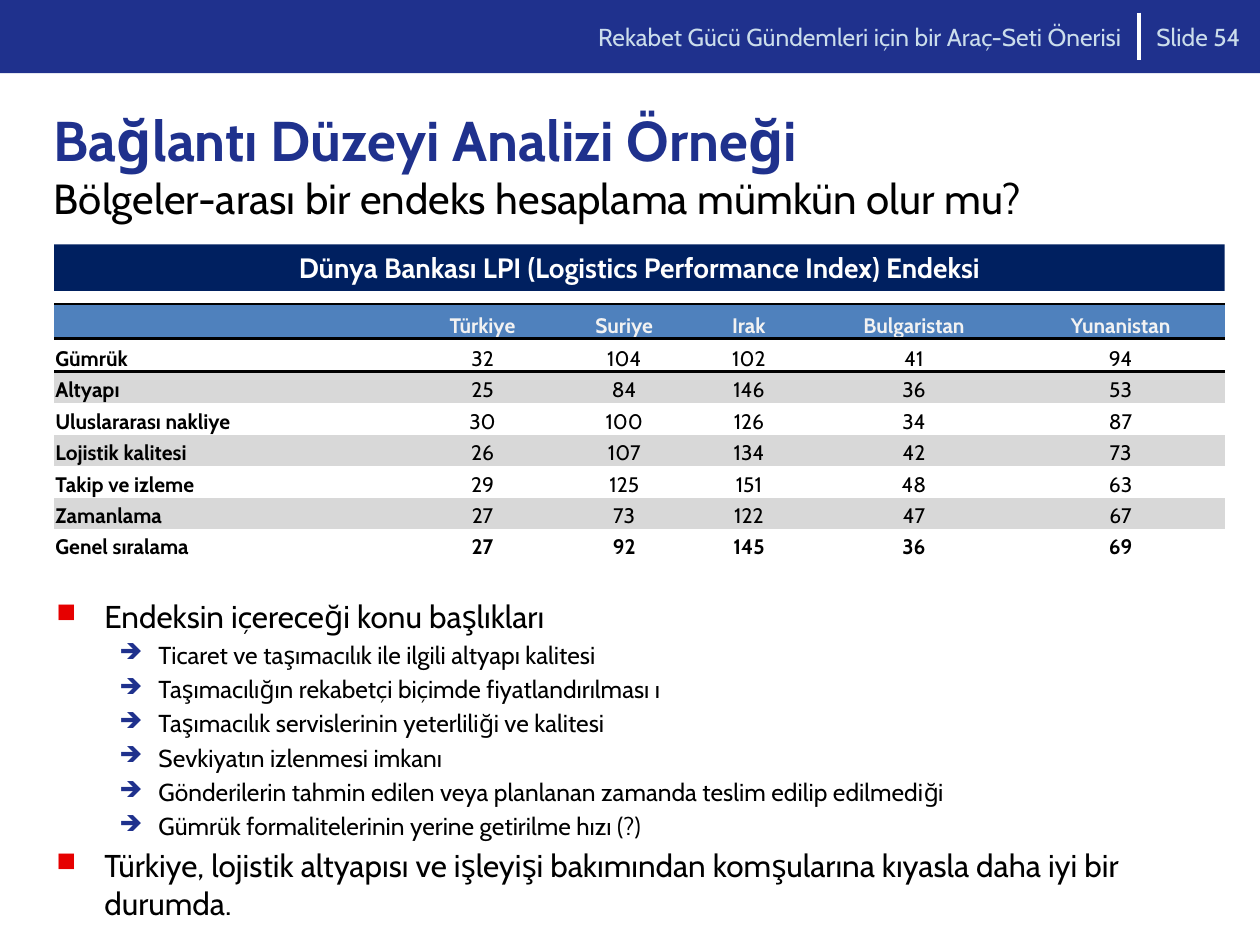
from dataclasses import dataclass
from typing import NamedTuple

from lxml import etree
from pptx import Presentation
from pptx.dml.color import RGBColor
from pptx.enum.shapes import MSO_CONNECTOR, MSO_SHAPE
from pptx.enum.text import MSO_ANCHOR, PP_ALIGN
from pptx.oxml.ns import qn
from pptx.util import Emu, Inches, Pt

LEFT, CENTER, RIGHT = PP_ALIGN.LEFT, PP_ALIGN.CENTER, PP_ALIGN.RIGHT
TOP, MIDDLE, BOTTOM = MSO_ANCHOR.TOP, MSO_ANCHOR.MIDDLE, MSO_ANCHOR.BOTTOM
RECTANGLE, STRAIGHT = MSO_SHAPE.RECTANGLE, MSO_CONNECTOR.STRAIGHT
PLAIN_TABLE_STYLE = "{2D5ABB26-0587-4C30-8999-92F81FD0307C}"


@dataclass(frozen=True)
class Theme:
    font: str = "Cabin"
    blue: str = "1F318D"
    navy: str = "002060"
    header_blue: str = "4F81BD"
    header_text: str = "F2F2F2"
    pale_blue: str = "CBDDEB"
    band: str = "D8D8D8"
    red: str = "E60000"
    black: str = "000000"
    white: str = "FFFFFF"
    title_size: int = 32
    subtitle_size: int = 24
    topic_size: int = 18
    caption_size: int = 16
    detail_size: int = 14
    table_size: int = 12


THEME = Theme()


class Area(NamedTuple):
    left: float
    top: float
    width: float
    height: float

    def lengths(self) -> tuple[Emu, ...]:
        return tuple(Inches(value) for value in self)


class Bullet(NamedTuple):
    symbol: str
    color: str
    percent: int
    indent: float
    hanging: float
    size: int
    space: float


class Item(NamedTuple):
    text: str
    bullet: Bullet


TOPIC = Bullet("■", THEME.red, 85, 0.38, 0.38, THEME.topic_size, 3)
DETAIL = Bullet("➔", THEME.blue, 90, 0.81, 0.31, THEME.detail_size, 2.8)
ITEMS = [
    Item("Endeksin içereceği konu başlıkları", TOPIC),
    Item("Ticaret ve taşımacılık ile ilgili altyapı kalitesi", DETAIL),
    Item("Taşımacılığın rekabetçi biçimde fiyatlandırılması ı", DETAIL),
    Item("Taşımacılık servislerinin yeterliliği ve kalitesi", DETAIL),
    Item("Sevkiyatın izlenmesi imkanı", DETAIL),
    Item("Gönderilerin tahmin edilen veya planlanan zamanda teslim edilip edilmediği", DETAIL),
    Item("Gümrük formalitelerinin yerine getirilme hızı (?)", DETAIL),
    Item("Türkiye, lojistik altyapısı ve işleyişi bakımından komşularına kıyasla "
         "daha iyi bir durumda.", TOPIC),
]
COLUMN_WIDTHS = [2.77, 1.26, 0.99, 0.99, 1.63, 1.65]
ROW_HEIGHTS = [0.28, 0.26, 0.25, 0.25, 0.25, 0.25, 0.25, 0.24]
RANKINGS = [
    ("", "Türkiye", "Suriye", "Irak", "Bulgaristan", "Yunanistan"),
    ("Gümrük", 32, 104, 102, 41, 94),
    ("Altyapı", 25, 84, 146, 36, 53),
    ("Uluslararası nakliye", 30, 100, 126, 34, 87),
    ("Lojistik kalitesi", 26, 107, 134, 42, 73),
    ("Takip ve izleme", 29, 125, 151, 48, 63),
    ("Zamanlama", 27, 73, 122, 47, 67),
    ("Genel sıralama", 27, 92, 145, 36, 69),
]


def style(span, size: int, color: str, bold: bool = False) -> None:
    span.font.name, span.font.size, span.font.bold = THEME.font, Pt(size), bold
    span.font.color.rgb = RGBColor.from_string(color)


def add_bar(page, area: Area, color: str):
    bar = page.shapes.add_shape(RECTANGLE, *area.lengths())
    bar.shadow.inherit = False
    bar.fill.solid()
    bar.fill.fore_color.rgb = RGBColor.from_string(color)
    bar.line.fill.background()
    return bar


def write(frame, text: str, size: int, color: str, align=LEFT, anchor=MIDDLE, bold=False) -> None:
    frame.word_wrap, frame.vertical_anchor = True, anchor
    frame.text = text
    para = frame.paragraphs[0]
    para.alignment = align
    for span in para.runs:
        style(span, size, color, bold)


def add_text(page, area: Area, text: str, size: int, color: str, align=LEFT):
    box = page.shapes.add_textbox(*area.lengths())
    write(box.text_frame, text, size, color, align)
    return box


def add_divider(page) -> None:
    x = Inches(9.04)
    divider = page.shapes.add_connector(STRAIGHT, x, Inches(0.1), x, Inches(0.48))
    divider.line.width = Pt(2.5)
    divider.line.color.rgb = RGBColor.from_string(THEME.white)
    etree.SubElement(divider._element.spPr, qn("a:effectLst"))


def add_bullet(para, bullet: Bullet) -> None:
    props = para._p.get_or_add_pPr()
    props.set("marL", str(Inches(bullet.indent)))
    props.set("indent", str(-Inches(bullet.hanging)))
    color = etree.SubElement(props, qn("a:buClr"))
    etree.SubElement(color, qn("a:srgbClr"), val=bullet.color)
    etree.SubElement(props, qn("a:buSzPct"), val=str(bullet.percent * 1000))
    etree.SubElement(props, qn("a:buChar"), char=bullet.symbol)


def add_items(page, area: Area, items: list[Item]) -> None:
    frame = page.shapes.add_textbox(*area.lengths()).text_frame
    frame.word_wrap, frame.vertical_anchor = True, TOP
    for index, item in enumerate(items):
        para = frame.add_paragraph() if index else frame.paragraphs[0]
        para.text = item.text
        para.level = int(item.bullet is DETAIL)
        add_bullet(para, item.bullet)
        if index:
            para.space_before = Pt(item.bullet.space)
        style(para.runs[0], item.bullet.size, THEME.black)


def add_border(cell, side: str, width: float) -> None:
    line = etree.SubElement(cell._tc.get_or_add_tcPr(), qn(f"a:{side}"), w=str(Pt(width)))
    fill = etree.SubElement(line, qn("a:solidFill"))
    etree.SubElement(fill, qn("a:srgbClr"), val=THEME.black)


def fill_cell(cell, row: int, column: int) -> None:
    cell.margin_left = cell.margin_right = cell.margin_top = Inches(0.01)
    cell.margin_bottom = Inches(0)
    cell.vertical_anchor = BOTTOM
    bold = row in (0, len(RANKINGS) - 1) or column == 0
    color = THEME.black if row else THEME.header_text
    text = str(RANKINGS[row][column])
    if text:
        write(cell.text_frame, text, THEME.table_size, color, CENTER if column else LEFT, BOTTOM, bold)
    else:
        etree.SubElement(cell.text_frame.paragraphs[0]._p, qn("a:endParaRPr"), sz=str(THEME.table_size * 100))
    if row == 0:
        add_border(cell, "lnT", 1.5)
        add_border(cell, "lnB", 2)
    elif row == 1:
        add_border(cell, "lnT", 2)
    if row and row % 2:
        cell.fill.background()
    else:
        cell.fill.solid()
        cell.fill.fore_color.rgb = RGBColor.from_string(THEME.band if row else THEME.header_blue)


def add_rankings(page, area: Area) -> None:
    table = page.shapes.add_table(len(RANKINGS), len(COLUMN_WIDTHS), *area.lengths()).table
    table.first_row = table.horz_banding = False
    table._tbl.tblPr.find(qn("a:tableStyleId")).text = PLAIN_TABLE_STYLE
    for column, width in zip(table.columns, COLUMN_WIDTHS):
        column.width = Inches(width)
    for row, height in zip(table.rows, ROW_HEIGHTS):
        row.height = Inches(height)
    for row in range(len(RANKINGS)):
        for column in range(len(COLUMN_WIDTHS)):
            fill_cell(table.cell(row, column), row, column)


def main() -> None:
    """Build the logistics ranking slide and save it."""
    deck = Presentation()
    deck.slide_width, deck.slide_height = Inches(10), Inches(7.5)
    page = deck.slides.add_slide(deck.slide_layouts[6])
    add_bar(page, Area(0, 0, 10, 0.58), THEME.blue)
    add_divider(page)
    add_items(page, Area(0.35, 4.69, 8.74, 2.6), ITEMS)
    add_text(page, Area(9.08, 0, 0.92, 0.59), "Slide 54", THEME.detail_size, THEME.pale_blue)
    title = add_text(page, Area(0.33, 0.84, 9.33, 0.92),
                     "Bağlantı Düzeyi Analizi Örneği\vBölgeler-arası bir endeks hesaplama mümkün olur mu?",
                     THEME.subtitle_size, THEME.black)
    style(title.text_frame.paragraphs[0].runs[0], THEME.title_size, THEME.blue, True)
    add_text(page, Area(2.08, 0, 6.92, 0.58), "Rekabet Gücü Gündemleri için bir Araç-Seti Önerisi",
             THEME.detail_size, THEME.pale_blue, RIGHT)
    caption = add_bar(page, Area(0.43, 1.94, 9.29, 0.37), THEME.navy)
    write(caption.text_frame, "Dünya Bankası LPI (Logistics Performance Index) Endeksi",
          THEME.caption_size, THEME.white, CENTER, bold=True)
    add_rankings(page, Area(0.43, 2.41, sum(COLUMN_WIDTHS), sum(ROW_HEIGHTS)))
    deck.save("out.pptx")


if __name__ == "__main__":
    main()
